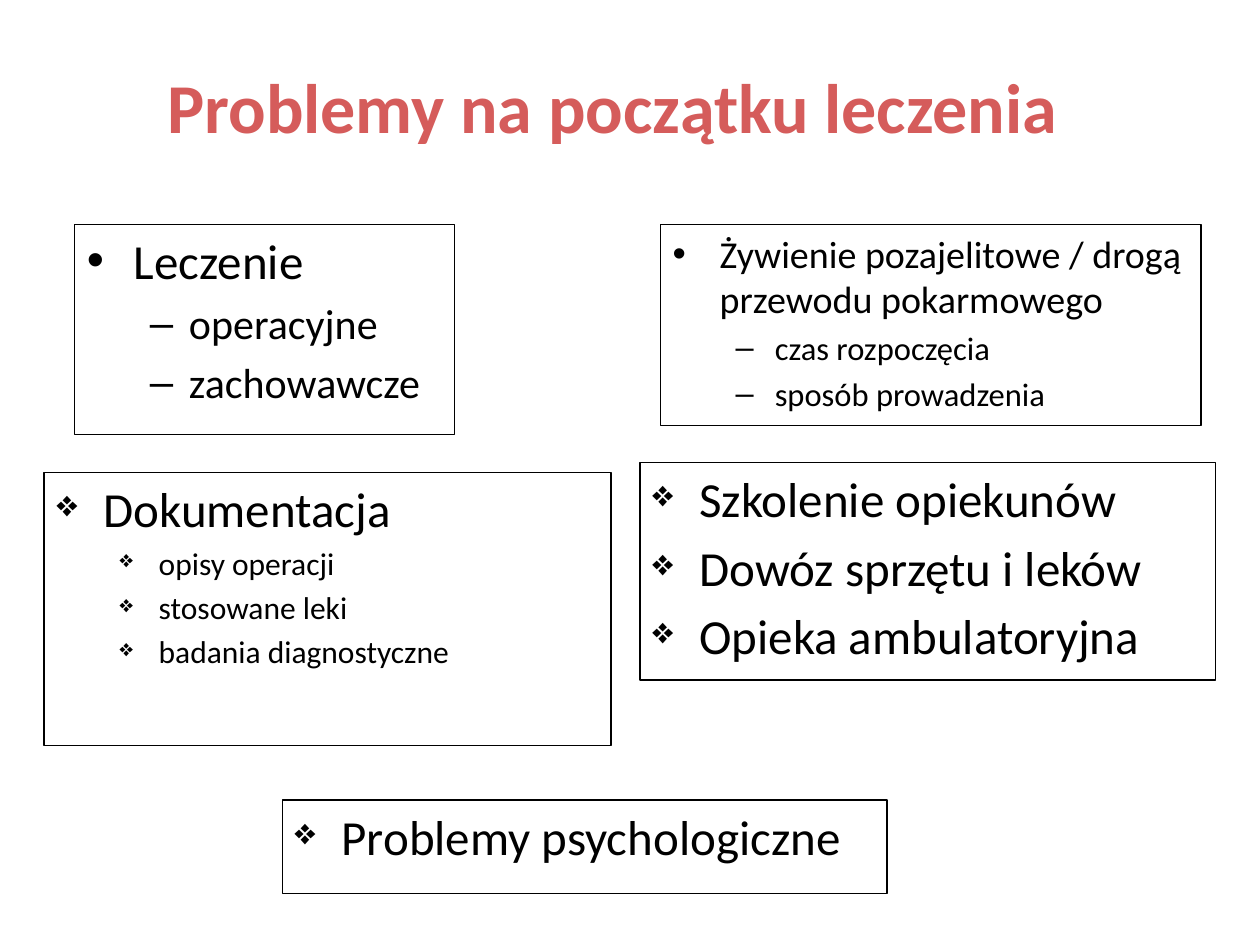
import pptx
import pptx.dml.color
import pptx.enum.shapes
import pptx.enum.text
import pptx.oxml.ns
import pptx.util
from lxml import etree

Cm = pptx.util.Cm
Pt = pptx.util.Pt
BLACK = pptx.dml.color.RGBColor(0x00, 0x00, 0x00)
RED = pptx.dml.color.RGBColor(0xD5, 0x5C, 0x5B)
FONT = "Calibri"

# Content: box position in cm, bullets and sizes per level, (level, text) lines
TITLE = "Problemy na początku leczenia"
DIAMONDS = "❖❖"
BOXES = [
    ((1.5, 4.52, 7.67, 4.24), "•–", (28, 24),
     [(0, "Leczenie"), (1, "operacyjne"), (1, "zachowawcze")]),
    ((13.31, 4.52, 10.9, 4.06), "•–", (21.7, 18.6),
     [(0, "Żywienie pozajelitowe / drogą przewodu pokarmowego"),
      (1, "czas rozpoczęcia"), (1, "sposób prowadzenia")]),
    ((0.89, 9.52, 11.43, 5.51), DIAMONDS, (28, 18),
     [(0, "Dokumentacja"), (1, "opisy operacji"), (1, "stosowane leki"),
      (1, "badania diagnostyczne")]),
    ((12.9, 9.32, 11.61, 4.39), DIAMONDS, (28, 18),
     [(0, "Szkolenie opiekunów"), (0, "Dowóz sprzętu i leków"),
      (0, "Opieka ambulatoryjna")]),
    ((5.69, 16.13, 12.19, 1.88), DIAMONDS, (28, 18),
     [(0, "Problemy psychologiczne")]),
]
INDENTS = [(0.95, -0.95), (2.06, -0.79)]  # left margin, first line (cm)


def set_bullet(paragraph, character, level):
    margin, hanging = INDENTS[level]
    properties = paragraph._p.get_or_add_pPr()
    properties.set("marL", str(Cm(margin)))
    properties.set("indent", str(Cm(hanging)))
    settings = [("buFont", "typeface", "Arial"), ("buChar", "char", character)]
    if character == "❖":
        settings[0] = ("buSzPct", "val", "75000")
    for tag, attribute, value in settings:
        element = etree.SubElement(properties, pptx.oxml.ns.qn("a:" + tag))
        element.set(attribute, value)


def add_box(slide, place, bullets, sizes, lines):
    shape = slide.shapes.add_shape(
        pptx.enum.shapes.MSO_SHAPE.RECTANGLE, *map(Cm, place))
    shape.shadow.inherit = False
    shape.fill.background()
    shape.line.color.rgb = BLACK
    shape.line.width = Pt(0.75)
    text_frame = shape.text_frame
    text_frame.word_wrap = True
    text_frame.vertical_anchor = pptx.enum.text.MSO_ANCHOR.TOP
    text_frame.text = "\n".join(text for _, text in lines)
    for index, (level, _) in enumerate(lines):
        paragraph = text_frame.paragraphs[index]
        paragraph.level = level
        paragraph.alignment = pptx.enum.text.PP_ALIGN.LEFT
        set_bullet(paragraph, bullets[level], level)
        if index:
            paragraph.space_before = Pt(round(0.2 * sizes[level], 1))
        font = paragraph.runs[0].font
        font.name = FONT
        font.size = Pt(sizes[level])
        font.color.rgb = BLACK


presentation = pptx.Presentation()
presentation.slide_width = Cm(25.4)
presentation.slide_height = Cm(19.05)
slide = presentation.slides.add_slide(presentation.slide_layouts[6])

# Title
title = slide.shapes.add_textbox(Cm(0), Cm(1.12), Cm(24.69), Cm(2.01))
title.text_frame.word_wrap = True
title.text_frame.vertical_anchor = pptx.enum.text.MSO_ANCHOR.MIDDLE
title.text_frame.text = TITLE
heading = title.text_frame.paragraphs[0]
heading.alignment = pptx.enum.text.PP_ALIGN.CENTER
heading_font = heading.runs[0].font
heading_font.name = FONT
heading_font.size = Pt(40)
heading_font.bold = True
heading_font.color.rgb = RED

# Problem boxes
for box in BOXES:
    add_box(slide, *box)

presentation.save("out.pptx")
